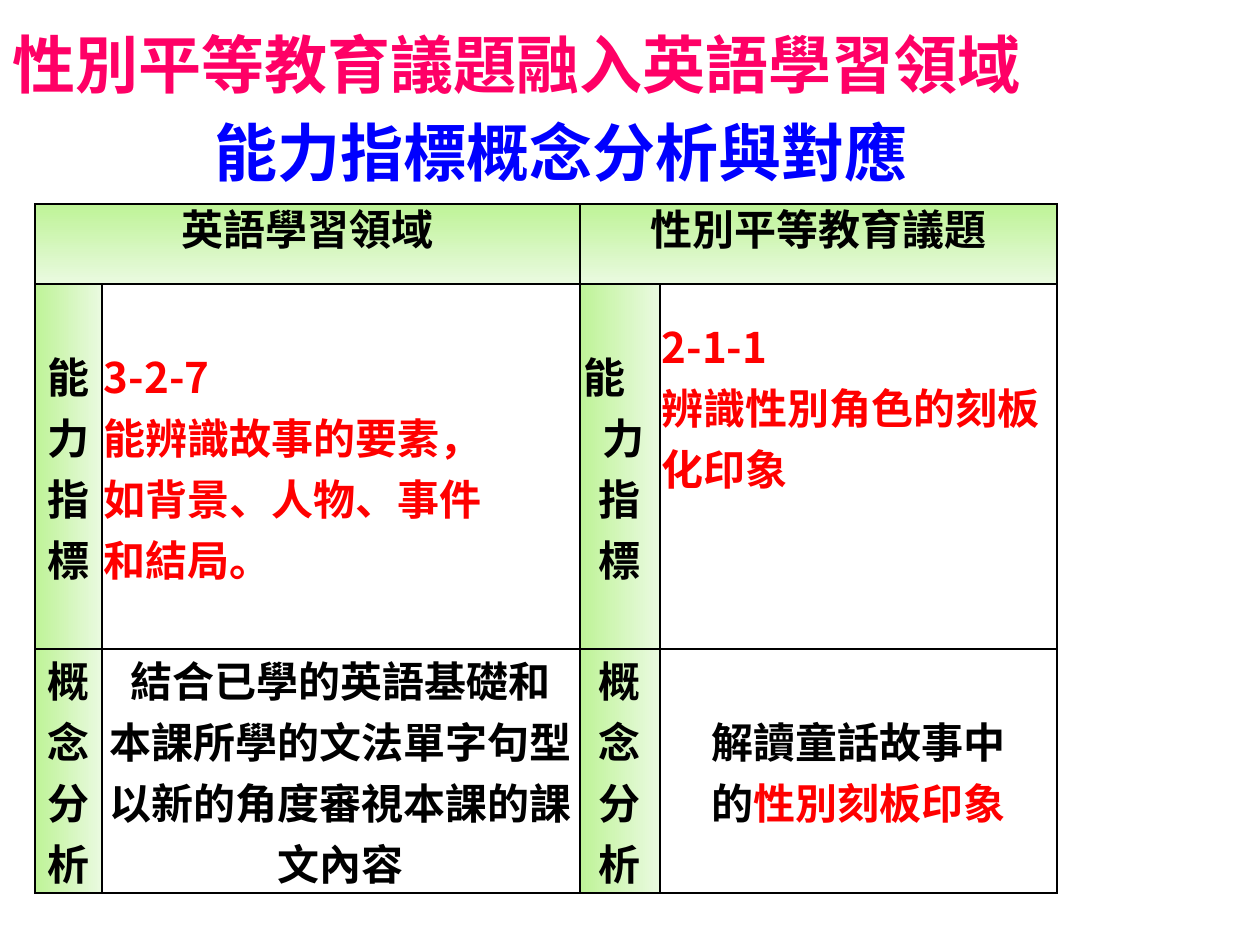
import pptx
import pptx.util
import pptx.dml.color
import pptx.enum.text
import pptx.oxml
import pptx.oxml.ns
from lxml import etree

PX = 914400 // 126
FONT = "Noto Sans CJK SC"
BLACK = pptx.dml.color.RGBColor(0x00, 0x00, 0x00)
RED = pptx.dml.color.RGBColor(0xFF, 0x00, 0x00)
BLUE = pptx.dml.color.RGBColor(0x00, 0x00, 0xFF)
PINK = pptx.dml.color.RGBColor(0xFF, 0x00, 0x66)
GREEN = pptx.dml.color.RGBColor(0xBE, 0xF3, 0x97)
PALE_GREEN = pptx.dml.color.RGBColor(0xEA, 0xFA, 0xE0)
LEFT = pptx.enum.text.PP_ALIGN.LEFT
CENTER = pptx.enum.text.PP_ALIGN.CENTER
qn = pptx.oxml.ns.qn


def add_span(para, text, size, color):
    span = para.add_run()
    span.text = text
    formats = {"name": FONT, "size": pptx.util.Pt(size), "bold": True}
    for name, value in formats.items():
        setattr(span.font, name, value)
    span.font.color.rgb = color
    etree.SubElement(span.font._element, qn("a:ea"), typeface=FONT)


def add_border(cell):
    properties = cell._tc.get_or_add_tcPr()
    for side in ("lnL", "lnR", "lnT", "lnB"):
        line = etree.SubElement(properties, qn("a:" + side), w="12700")
        fill = etree.SubElement(line, qn("a:solidFill"))
        etree.SubElement(fill, qn("a:srgbClr"), val=str(BLACK))


deck = pptx.Presentation()
deck.slide_width = 1260 * PX
deck.slide_height = 945 * PX
page = deck.slides.add_slide(deck.slide_layouts[6])

# Table grid
columns = [67, 478, 80, 397]
rows = [80, 365, 244]
frame = page.shapes.add_table(3, 4, 35 * PX, 204 * PX, sum(columns) * PX, sum(rows) * PX)
table = frame.table
table.first_row = False
table.horz_banding = False
for column, width in zip(table.columns, columns):
    column.width = width * PX
for row, height in zip(table.rows, rows):
    row.height = height * PX
for first in (0, 2):
    table.cell(0, first).merge(table.cell(0, first + 1))

# Borders and fills: green headings, plain contents
for r in range(3):
    for c in range(4):
        cell = table.cell(r, c)
        add_border(cell)
        if r == 0 or c % 2 == 0:
            cell.fill.gradient()
            cell.fill.gradient_angle = 270 if r == 0 else 0
            for stop, color in zip(cell.fill.gradient_stops, (GREEN, PALE_GREEN)):
                stop.color.rgb = color
        else:
            cell.fill.background()

# Table text: (row, column), alignment, paragraphs of (text, colour) spans
contents = [
    (0, 0, CENTER, [[("英語學習領域", BLACK)]]),
    (0, 2, CENTER, [[("性別平等教育議題", BLACK)]]),
    (1, 0, CENTER, [[("能力指標", BLACK)]]),
    (1, 1, LEFT, [[("3-2-7", RED)], [("能辨識故事的要素，", RED)],
                  [("如背景、人物、事件", RED)], [("和結局。", RED)]]),
    (1, 2, CENTER, [[("能", BLACK)], [("力", BLACK)], [("指標", BLACK)]]),
    (1, 3, LEFT, [[("2-1-1", RED)], [("辨識性別角色的刻板", RED)], [("化印象", RED)]]),
    (2, 0, CENTER, [[("概念分析", BLACK)]]),
    (2, 1, CENTER, [[("結合已學的英語基礎和", BLACK)], [("本課所學的文法單字句型", BLACK)],
                    [("以新的角度審視本課的課文內容", BLACK)]]),
    (2, 2, CENTER, [[("概念", BLACK)], [("分析", BLACK)]]),
    (2, 3, CENTER, [[("解讀童話故事中", BLACK)], [("的", BLACK), ("性別刻板印象", RED)]]),
]
for r, c, align, paragraphs in contents:
    cell = table.cell(r, c)
    formats = {"margin_left": 2 * PX, "margin_right": 2 * PX, "margin_top": 0,
               "margin_bottom": 0, "vertical_anchor": pptx.enum.text.MSO_ANCHOR.MIDDLE}
    for name, value in formats.items():
        setattr(cell, name, value)
    for number, spans in enumerate(paragraphs):
        para = cell.text_frame.add_paragraph() if number else cell.text_frame.paragraphs[0]
        para.alignment = align
        if r == 0:
            para.line_spacing = pptx.util.Pt(16)
        for text, color in spans:
            add_span(para, text, 24, color)

# The right indicator text sits above the middle
table.cell(1, 3).margin_bottom = 120 * PX

# The right indicator label steps its first two characters
for para, indent in zip(table.cell(1, 2).text_frame.paragraphs, (2, 21)):
    para.alignment = LEFT
    para._p.get_or_add_pPr().set("marL", str(indent * PX))

# Title lines
titles = [
    ("能力指標概念分析與對應", BLUE, CENTER, (64, 116, 993, 59)),
    ("性別平等教育議題融入英語學習領域", PINK, LEFT, (0, 28, 1235, 88)),
]
for text, color, align, place in titles:
    box = page.shapes.add_textbox(*[length * PX for length in place])
    box.text_frame.word_wrap = True
    para = box.text_frame.paragraphs[0]
    para.alignment = align
    para.line_spacing = 0.9
    add_span(para, text, 36, color)

deck.save("out.pptx")
